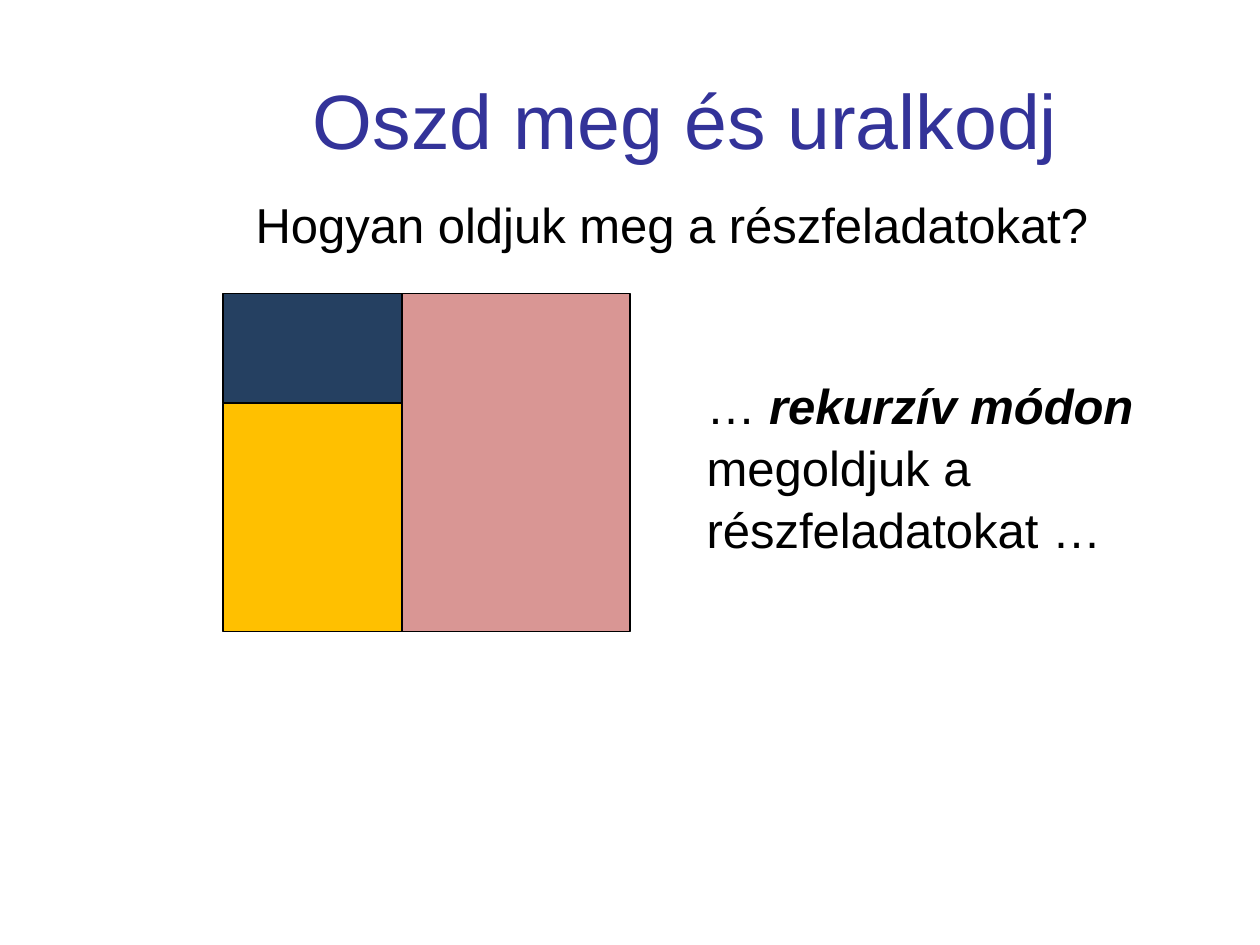
from pptx import Presentation
from pptx.dml.color import RGBColor
from pptx.enum.shapes import MSO_SHAPE
from pptx.enum.text import MSO_ANCHOR, PP_ALIGN
from pptx.util import Inches, Pt

RECT = MSO_SHAPE.RECTANGLE
MIDDLE, TOP = MSO_ANCHOR.MIDDLE, MSO_ANCHOR.TOP
CENTER, LEFT = PP_ALIGN.CENTER, PP_ALIGN.LEFT
WIDTH, HEIGHT = 10, 7.5


def color(code):
    return RGBColor.from_string(code)


def put(target, values):
    """Set each named attribute of the target."""
    for name, value in values.items():
        setattr(target, name, value)


class Deck:
    """Holds the style and the current slide."""
    font = "Arial"
    ink = "000000"
    accent = "333399"
    spacing = 1.05

    def __init__(self):
        self.show = Presentation()
        put(self.show, {"slide_width": Inches(WIDTH),
                        "slide_height": Inches(HEIGHT)})
        self.slide = self.show.slides.add_slide(self.show.slide_layouts[5])

    def label(self, shape, runs, size, tint, align, anchor):
        """Fill a shape with one paragraph of (text, format) runs."""
        put(shape.text_frame, {"word_wrap": True, "vertical_anchor": anchor})
        para = shape.text_frame.paragraphs[0]
        put(para, {"alignment": align, "line_spacing": self.spacing})
        for words, style in runs:
            run = para.add_run()
            run.text = words
            put(run.font, {"name": self.font, "size": Pt(size), **style})
            run.font.color.rgb = color(tint)

    def title(self, words, left, top, width, height):
        shape = self.slide.shapes.title
        put(shape, {"left": Inches(left), "top": Inches(top),
                    "width": Inches(width), "height": Inches(height)})
        self.label(shape, [(words, {})], 44, self.accent, CENTER, MIDDLE)

    def text(self, runs, *box):
        shape = self.slide.shapes.add_textbox(*map(Inches, box))
        self.label(shape, runs, 28, self.ink, LEFT, TOP)

    def block(self, fill, *box):
        shape = self.slide.shapes.add_shape(RECT, *map(Inches, box))
        shape.shadow.inherit = False
        shape.fill.solid()
        shape.fill.fore_color.rgb = color(fill)
        shape.line.color.rgb = color(self.ink)
        shape.line.width = Pt(0.75)


def main():
    deck = Deck()
    deck.title("Oszd meg és uralkodj", 1.38, 0.3, 8.12, 1.25)
    deck.text([("… ", {}),
               ("rekurzív módon ", {"bold": True, "italic": True}),
               ("megoldjuk a részfeladatokat …", {})],
              5.51, 2.91, 4.37, 1.5)

    # Column and row edges of the divided problem
    cols = [1.77, 3.19, 5]
    rows = [2.33, 3.2, 5.01]
    # Fill, first and last column edge, first and last row edge
    parts = [("254061", 0, 1, 0, 1),
             ("D99694", 1, 2, 0, 2),
             ("FFC000", 0, 1, 1, 2)]
    for fill, west, east, north, south in parts:
        deck.block(fill, cols[west], rows[north],
                   cols[east] - cols[west], rows[south] - rows[north])

    deck.text([("Hogyan oldjuk meg a részfeladatokat?", {})],
              1.93, 1.47, 7.16, 0.57)
    deck.show.save("out.pptx")


if __name__ == "__main__":
    main()
